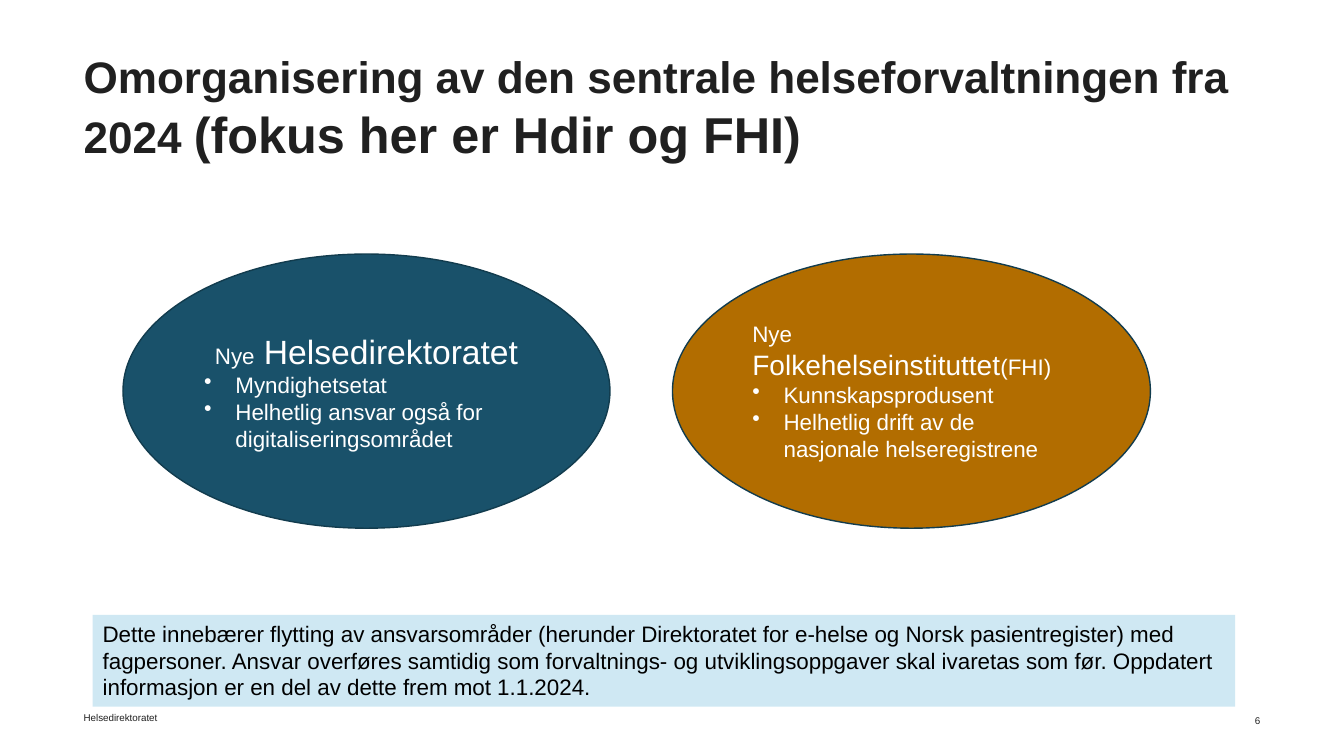
import pptx
import pptx.util
import pptx.dml.color
import pptx.enum.shapes
import pptx.enum.text
import lxml.etree

RGB = pptx.dml.color.RGBColor
SHAPE = pptx.enum.shapes.MSO_SHAPE
ANCHOR = pptx.enum.text.MSO_ANCHOR
ALIGN = pptx.enum.text.PP_ALIGN
PX = 9144
INK = RGB(0x20, 0x20, 0x20)
BLACK = RGB(0x00, 0x00, 0x00)
WHITE = RGB(0xFF, 0xFF, 0xFF)
TEAL = RGB(0x19, 0x51, 0x6A)
DARK_TEAL = RGB(0x12, 0x3C, 0x4E)
OCHRE = RGB(0xB2, 0x6D, 0x00)
PALE_BLUE = RGB(0xCF, 0xE8, 0xF3)


def scale(box):
    return [pptx.util.Emu(length * PX) for length in box]


def write(paragraph, runs, color, align=ALIGN.LEFT, bold=False):
    paragraph.alignment = align
    paragraph.font.name = "Arial"
    paragraph.font.color.rgb = color
    paragraph.font.bold = bold
    sizes = {size for _, size in runs}
    if len(sizes) == 1:
        paragraph.font.size = pptx.util.Pt(runs[0][1])
    for text, size in runs:
        run = paragraph.add_run()
        run.text = text
        if len(sizes) > 1:
            run.font.size = pptx.util.Pt(size)


def add_bullet(paragraph, indent):
    properties = paragraph._p.get_or_add_pPr()
    properties.set("marL", str(indent * PX))
    properties.set("indent", str(-indent * PX))
    bullet = lxml.etree.Element(pptx.oxml.ns.qn("a:buChar"), char="•")
    default_run = properties.find(pptx.oxml.ns.qn("a:defRPr"))
    default_run.addprevious(bullet)


def remove_margins(frame):
    frame.margin_left = frame.margin_right = 0
    frame.margin_top = frame.margin_bottom = 0


def add_heading(slide, box, runs):
    heading = slide.shapes.title
    heading.left, heading.top, heading.width, heading.height = scale(box)
    frame = heading.text_frame
    remove_margins(frame)
    frame.word_wrap = True
    frame.auto_size = pptx.enum.text.MSO_AUTO_SIZE.NONE
    frame.vertical_anchor = ANCHOR.BOTTOM
    write(frame.paragraphs[0], runs, INK, bold=True)


def add_footer(slide, box, text, align):
    frame = slide.shapes.add_textbox(*scale(box)).text_frame
    remove_margins(frame)
    frame.word_wrap = True
    frame.vertical_anchor = ANCHOR.MIDDLE
    write(frame.paragraphs[0], [(text, 7)], INK, align)


def add_panel(slide, kind, box, fill):
    panel = slide.shapes.add_shape(kind, *scale(box))
    panel.shadow.inherit = False
    panel.fill.solid()
    panel.fill.fore_color.rgb = fill
    panel.text_frame.word_wrap = True
    return panel


def add_agency(slide, box, fill, name, align, duties):
    agency = add_panel(slide, SHAPE.OVAL, box, fill)
    agency.line.color.rgb = DARK_TEAL
    agency.line.width = pptx.util.Pt(1)
    frame = agency.text_frame
    frame.vertical_anchor = ANCHOR.MIDDLE
    write(frame.paragraphs[0], name, WHITE, align)
    for duty in duties:
        paragraph = frame.add_paragraph()
        write(paragraph, [(duty, 16)], WHITE)
        add_bullet(paragraph, 31)


def add_consequence(slide, box, text):
    consequence = add_panel(slide, SHAPE.RECTANGLE, box, PALE_BLUE)
    consequence.line.fill.background()
    consequence.text_frame.vertical_anchor = ANCHOR.TOP
    write(consequence.text_frame.paragraphs[0], [(text, 16)], BLACK)


def main():
    deck = pptx.Presentation()
    deck.slide_width, deck.slide_height = scale((1333, 750))
    slide = deck.slides.add_slide(deck.slide_layouts[5])
    add_heading(slide, (83, 35, 1166, 127), [
        ("Omorganisering av den sentrale helseforvaltningen fra 2024 ", 31.5),
        ("(fokus her er Hdir og FHI)", 36),
    ])
    add_footer(slide, (83, 706, 98, 12), "Helsedirektoratet", ALIGN.LEFT)
    add_footer(slide, (1152, 709, 98, 12), "6", ALIGN.RIGHT)
    add_agency(
        slide, (122, 252, 483, 272), TEAL,
        [("Nye", 16), (" Helsedirektoratet", 24)], ALIGN.CENTER,
        ["Myndighetsetat", "Helhetlig ansvar også for digitaliseringsområdet"],
    )
    add_agency(
        slide, (667, 252, 474, 272), OCHRE,
        [("Nye ", 16), ("Folkehelseinstituttet", 20), ("(FHI)", 16)], ALIGN.LEFT,
        ["Kunnskapsprodusent", "Helhetlig drift av de nasjonale helseregistrene"],
    )
    add_consequence(
        slide, (92, 610, 1133, 91),
        "Dette innebærer flytting av ansvarsområder (herunder Direktoratet for e-helse "
        "og Norsk pasientregister) med fagpersoner. Ansvar overføres samtidig som "
        "forvaltnings- og utviklingsoppgaver skal ivaretas som før. Oppdatert "
        "informasjon er en del av dette frem mot 1.1.2024.",
    )
    deck.save("out.pptx")


if __name__ == "__main__":
    main()
